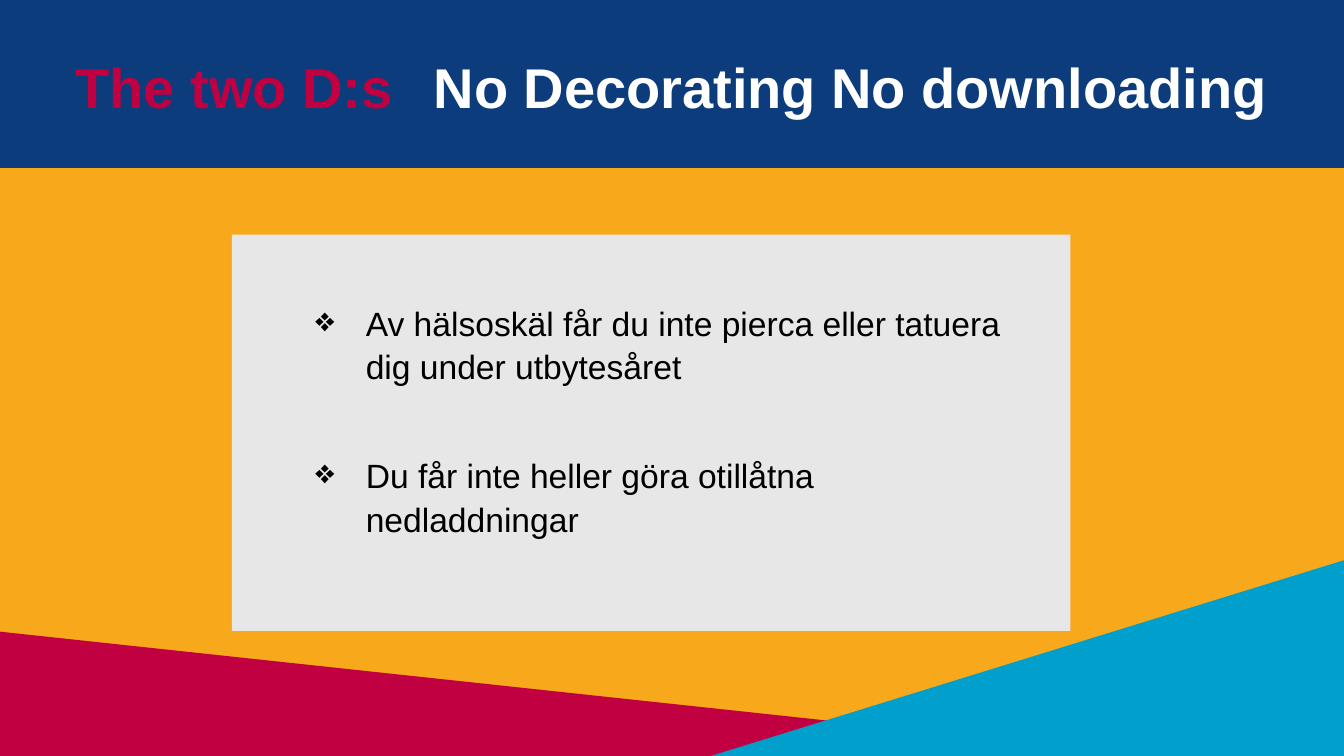
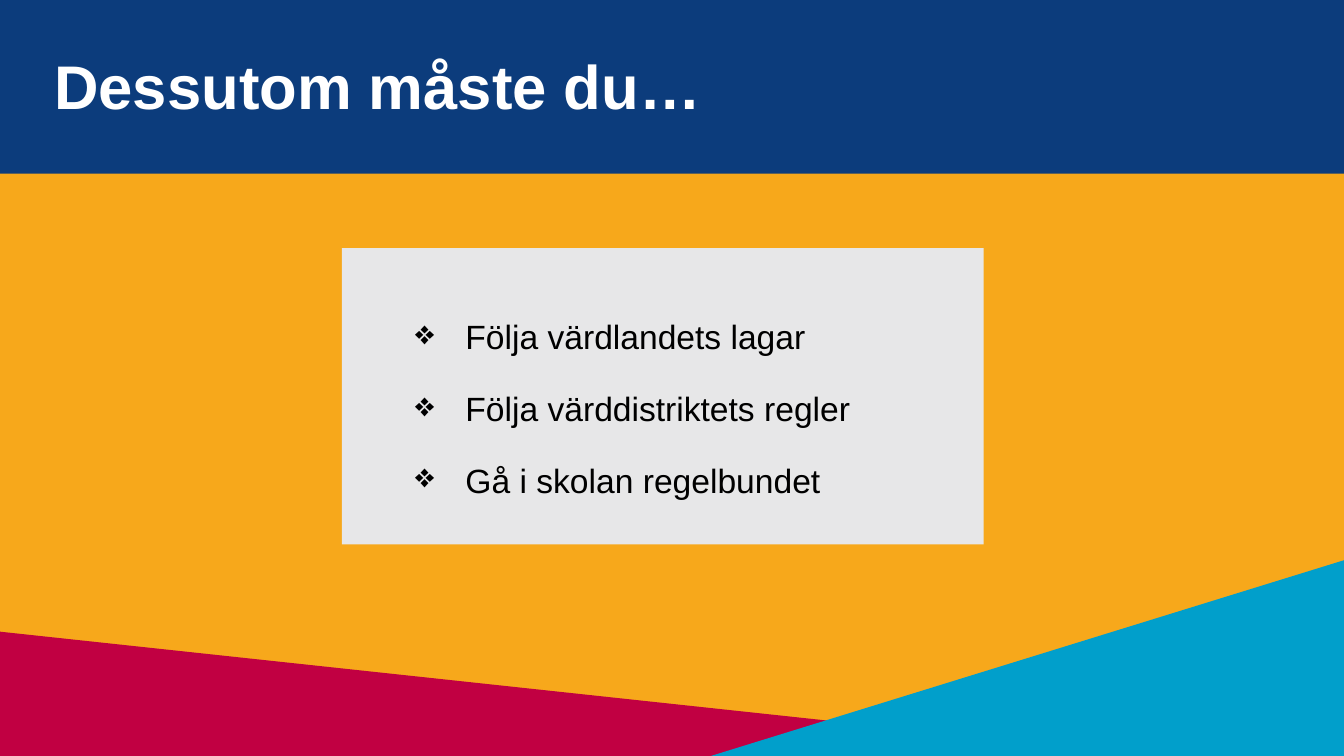
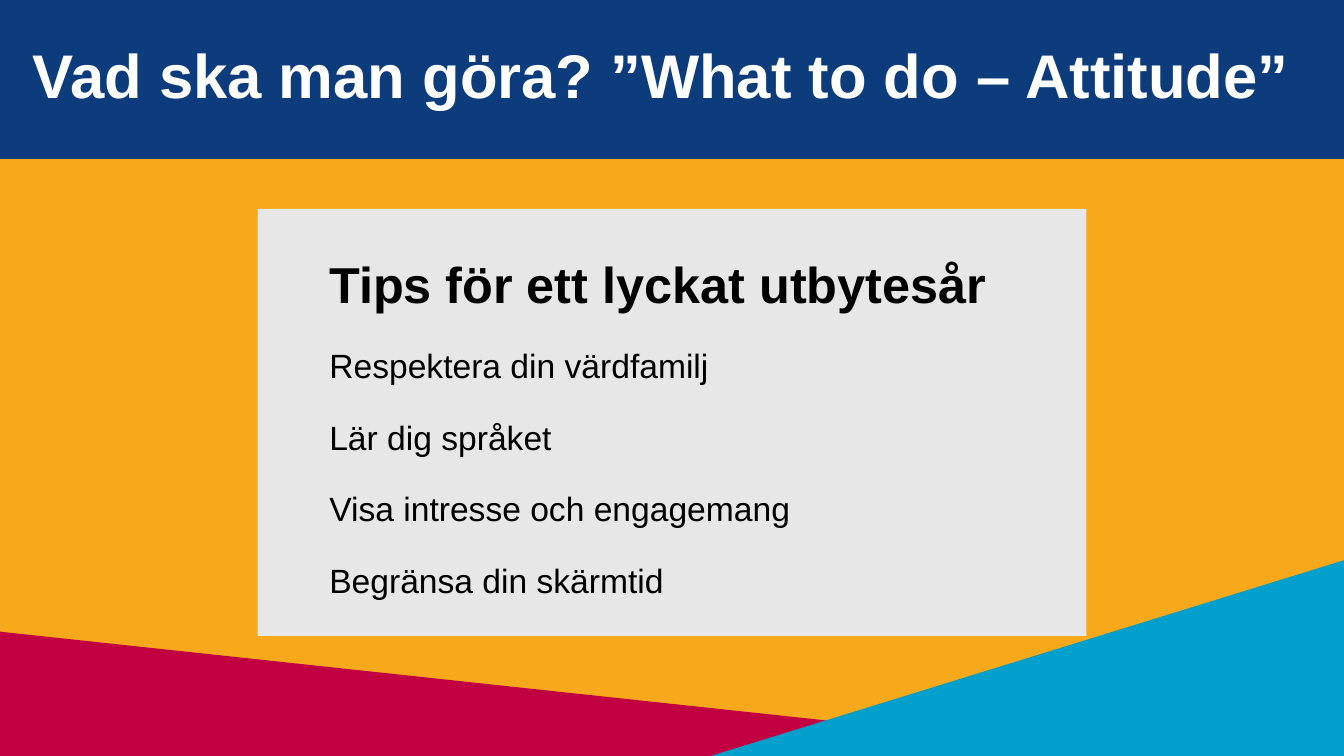
from lxml import etree
from pptx import Presentation
from pptx.dml.color import RGBColor
from pptx.enum.shapes import MSO_SHAPE
from pptx.enum.text import PP_ALIGN
from pptx.oxml.ns import qn
from pptx.util import Pt

RECT = MSO_SHAPE.RECTANGLE
WEDGE = MSO_SHAPE.RIGHT_TRIANGLE
CENTER = PP_ALIGN.CENTER
WIDE, HIGH = 960, 540

HUES = {
    "gold": "F7A81B",
    "navy": "0C3C7C",
    "grey": "E7E7E8",
    "red": "C10042",
    "sky": "019FCB",
    "white": "FFFFFF",
    "black": "000000",
}

# Text formats
HEAD = {"size": Pt(44), "bold": True}
SLIM = {"size": Pt(40), "bold": True}
LEAD = {"size": Pt(36), "bold": True}
BODY = {"size": Pt(24), "bold": False}

# Paragraph formats
TIGHT = {"line_spacing": 1.07, "space_after": Pt(8)}
LOOSE = {"line_spacing": 1.5, "space_after": Pt(8)}
APART = {"line_spacing": 1.07, "space_after": Pt(47)}


def color(hue):
    return RGBColor.from_string(HUES[hue])


def apply(target, form):
    for key, value in form.items():
        setattr(target, key, value)


def block(slide, kind, box, hue, flip=False):
    shape = slide.shapes.add_shape(kind, *map(Pt, box))
    shape.shadow.inherit = False
    shape.fill.solid()
    shape.fill.fore_color.rgb = color(hue)
    shape.line.fill.background()
    if flip:
        shape.element.spPr.xfrm.set("flipH", "1")


def frame(slide, box):
    text = slide.shapes.add_textbox(*map(Pt, box)).text_frame
    text.word_wrap = True
    return text


def write(para, words, form, hue):
    run = para.add_run()
    run.text = words
    apply(run.font, {"name": "Arial", **form})
    run.font.color.rgb = color(hue)


def bullet(para):
    props = para._p.get_or_add_pPr()
    props.set("marL", str(Pt(36)))
    props.set("indent", str(-Pt(36)))
    etree.SubElement(props, qn("a:buChar")).set("char", "❖")


def tab(para, stop):
    props = para._p.get_or_add_pPr()
    tabs = etree.SubElement(props, qn("a:tabLst"))
    mark = etree.SubElement(tabs, qn("a:tab"))
    mark.set("pos", str(Pt(stop)))
    mark.set("algn", "l")


def title(slide, box, runs, form, align=None, stop=None):
    para = frame(slide, box).paragraphs[0]
    if stop:
        tab(para, stop)
    para.alignment = align
    for words, hue in runs:
        write(para, words, form, hue)


def items(slide, box, rows, marks=False):
    text = frame(slide, box)
    for i, (words, form, space) in enumerate(rows):
        para = text.add_paragraph() if i else text.paragraphs[0]
        if marks:
            bullet(para)
        apply(para, space)
        write(para, words, form, "black")


def page(deck, band, panel):
    """Add a slide with the shared backdrop, title band and grey panel."""
    slide = deck.slides.add_slide(deck.slide_layouts[6])
    fill = slide.background.fill
    fill.solid()
    fill.fore_color.rgb = color("gold")
    block(slide, RECT, (0, 0, WIDE, band), "navy")
    block(slide, RECT, panel, "grey")
    block(slide, WEDGE, (0, 451.2, 826.6, HIGH - 451.2), "red")
    block(slide, WEDGE, (507.8, 400.2, WIDE - 507.8, HIGH - 400.2), "sky", True)
    return slide


def main():
    deck = Presentation()
    deck.slide_width, deck.slide_height = Pt(WIDE), Pt(HIGH)

    # The two D:s
    slide = page(deck, 120, (165.6, 167.6, 599, 283))
    title(slide, (46.8, 33.8, 876, 55.5),
          [("The two D:s\t", "red"), ("No Decorating No downloading", "white")],
          SLIM, stop=256)
    rules = ["Av hälsoskäl får du inte pierca eller tatuera dig under utbytesåret",
             "Du får inte heller göra otillåtna nedladdningar"]
    items(slide, (218.2, 211, 512, 209),
          [(words, BODY, APART) for words in rules], True)

    # Further duties
    slide = page(deck, 124, (244.2, 177.2, 458.5, 211.6))
    title(slide, (31.7, 31, 900, 60.5), [("Dessutom måste du…", "white")], HEAD)
    duties = ["Följa värdlandets lagar", "Följa värddistriktets regler",
              "Gå i skolan regelbundet"]
    items(slide, (289.4, 208, 419, 150),
          [(words, BODY, LOOSE) for words in duties], True)

    # Attitude
    slide = page(deck, 113.6, (184, 149.3, 592, 305))
    title(slide, (0, 23, 945.4, 60.5),
          [("Vad ska man göra? ”What to do – Attitude”", "white")], HEAD, CENTER)
    tips = ["Respektera din värdfamilj", "Lär dig språket",
            "Visa intresse och engagemang", "Begränsa din skärmtid"]
    items(slide, (228.2, 174.2, 525.6, 255.6),
          [("Tips för ett lyckat utbytesår", LEAD, TIGHT)]
          + [(words, BODY, LOOSE) for words in tips])

    deck.save("out.pptx")


if __name__ == "__main__":
    main()
